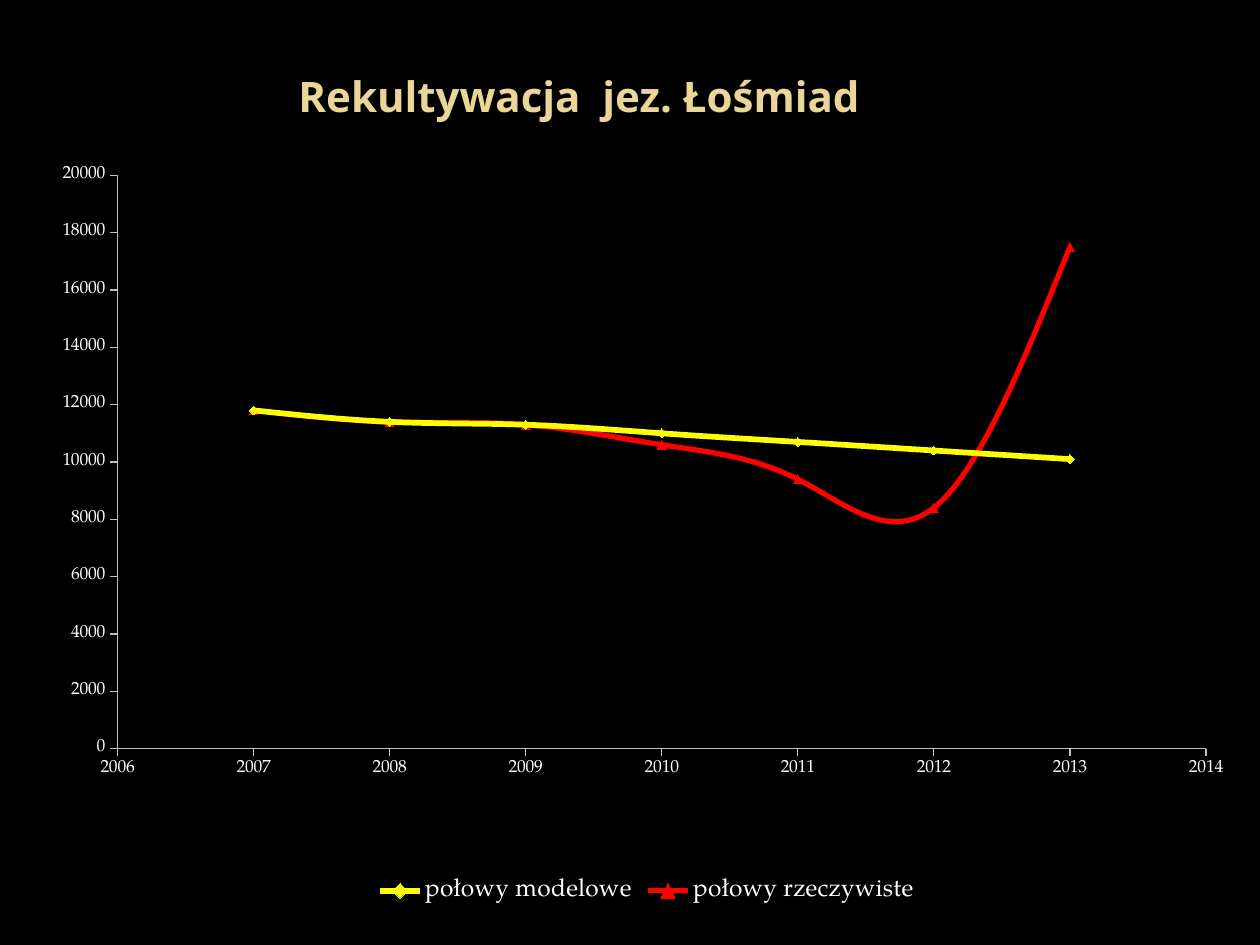
from lxml import etree
from pptx import Presentation
from pptx import util as u
from pptx.chart.data import XyChartData
from pptx.dml.color import RGBColor
from pptx.enum import chart as ch, text
from pptx.oxml.ns import qn

BLACK = RGBColor(0x00, 0x00, 0x00)
WHITE = RGBColor(0xFF, 0xFF, 0xFF)
GOLD = RGBColor(0xEA, 0xD6, 0x96)
YELLOW = RGBColor(0xFF, 0xFF, 0x00)
RED = RGBColor(0xFF, 0x00, 0x00)
GREY = RGBColor(0xC0, 0xC0, 0xC0)

TITLE_FONT = "Open Sans"
CHART_FONT = "TeX Gyre Pagella"

YEARS = range(2007, 2014)
# name, catches by year, colour, line width, marker
CATCHES = [
    ("połowy modelowe", (11800, 11400, 11300, 11000, 10700, 10400, 10100),
     YELLOW, 3.25, ch.XL_MARKER_STYLE.DIAMOND),
    ("połowy rzeczywiste", (11800, 11400, 11300, 10600, 9400, 8400, 17500),
     RED, 3, ch.XL_MARKER_STYLE.TRIANGLE),
]


def set_font(font, name, size, color, bold=False):
    font.name, font.size, font.bold = name, u.Pt(size), bold
    font.color.rgb = color


def add_title(s, x, y, w, h):
    tf = s.shapes.add_textbox(x, y, w, h).text_frame
    tf.word_wrap = True
    tf.vertical_anchor = text.MSO_ANCHOR.MIDDLE
    p = tf.paragraphs[0]
    p.alignment = text.PP_ALIGN.CENTER
    r = p.add_run()
    r.text = "Rekultywacja  jez. Łośmiad"
    set_font(r.font, TITLE_FONT, 24, GOLD, bold=True)


def set_plot_layout(chart, **box):
    """Fix the inner plot area, in fractions of the chart."""
    area = chart._chartSpace.find(".//" + qn("c:plotArea"))
    for old in area.findall(qn("c:layout")):
        area.remove(old)
    layout = etree.Element(qn("c:layout"))
    area.insert(0, layout)
    manual = etree.SubElement(layout, qn("c:manualLayout"))
    values = {"layoutTarget": "inner", "xMode": "edge", "yMode": "edge", **box}
    for tag, val in values.items():
        etree.SubElement(manual, qn("c:" + tag)).set("val", str(val))


def style_axis(axis, low, high, step):
    axis.minimum_scale, axis.maximum_scale, axis.major_unit = low, high, step
    axis.has_major_gridlines = False
    axis.major_tick_mark = ch.XL_TICK_MARK.OUTSIDE
    axis.minor_tick_mark = ch.XL_TICK_MARK.NONE
    axis.tick_labels.number_format = "0"
    axis.tick_labels.number_format_is_linked = False
    axis.format.line.color.rgb = GREY
    axis.format.line.width = u.Pt(0.75)


def add_catch_chart(s, x, y, w, h):
    data = XyChartData()
    for name, values, *_ in CATCHES:
        series = data.add_series(name)
        for year, value in zip(YEARS, values):
            series.add_data_point(year, value)
    chart = s.shapes.add_chart(
        ch.XL_CHART_TYPE.XY_SCATTER_SMOOTH, x, y, w, h, data).chart
    set_font(chart.font, CHART_FONT, 10, WHITE)
    chart.has_title = False

    # Axes and plot area
    style_axis(chart.category_axis, 2006, 2014, 1)
    style_axis(chart.value_axis, 0, 20000, 2000)
    set_plot_layout(chart, x=0.068, y=0.04, w=0.888, h=0.751)

    # Legend
    chart.has_legend = True
    chart.legend.position = ch.XL_LEGEND_POSITION.BOTTOM
    chart.legend.include_in_layout = False
    set_font(chart.legend.font, CHART_FONT, 14, WHITE)

    # Curves
    plot = chart.plots[0]
    plot.vary_by_categories = False
    for series, (_, _, color, width, style) in zip(plot.series, CATCHES):
        series.format.line.color.rgb = color
        series.format.line.width = u.Pt(width)
        marker = series.marker
        marker.style, marker.size = style, 5
        marker.format.fill.solid()
        marker.format.fill.fore_color.rgb = color
        marker.format.line.color.rgb = color
        for smooth in series._element.findall(qn("c:smooth")):
            smooth.set("val", "1")


def main():
    prs = Presentation()
    prs.slide_width, prs.slide_height = u.Cm(25.4), u.Cm(19.05)
    s = prs.slides.add_slide(prs.slide_layouts[6])
    s.background.fill.solid()
    s.background.fill.fore_color.rgb = BLACK
    add_title(s, u.Cm(1.3), u.Cm(0.74), u.Cm(20.75), u.Cm(2.39))
    add_catch_chart(s, u.Cm(0.69), u.Cm(2.92), u.Cm(24.71), u.Cm(15.39))
    prs.save("out.pptx")


if __name__ == "__main__":
    main()
